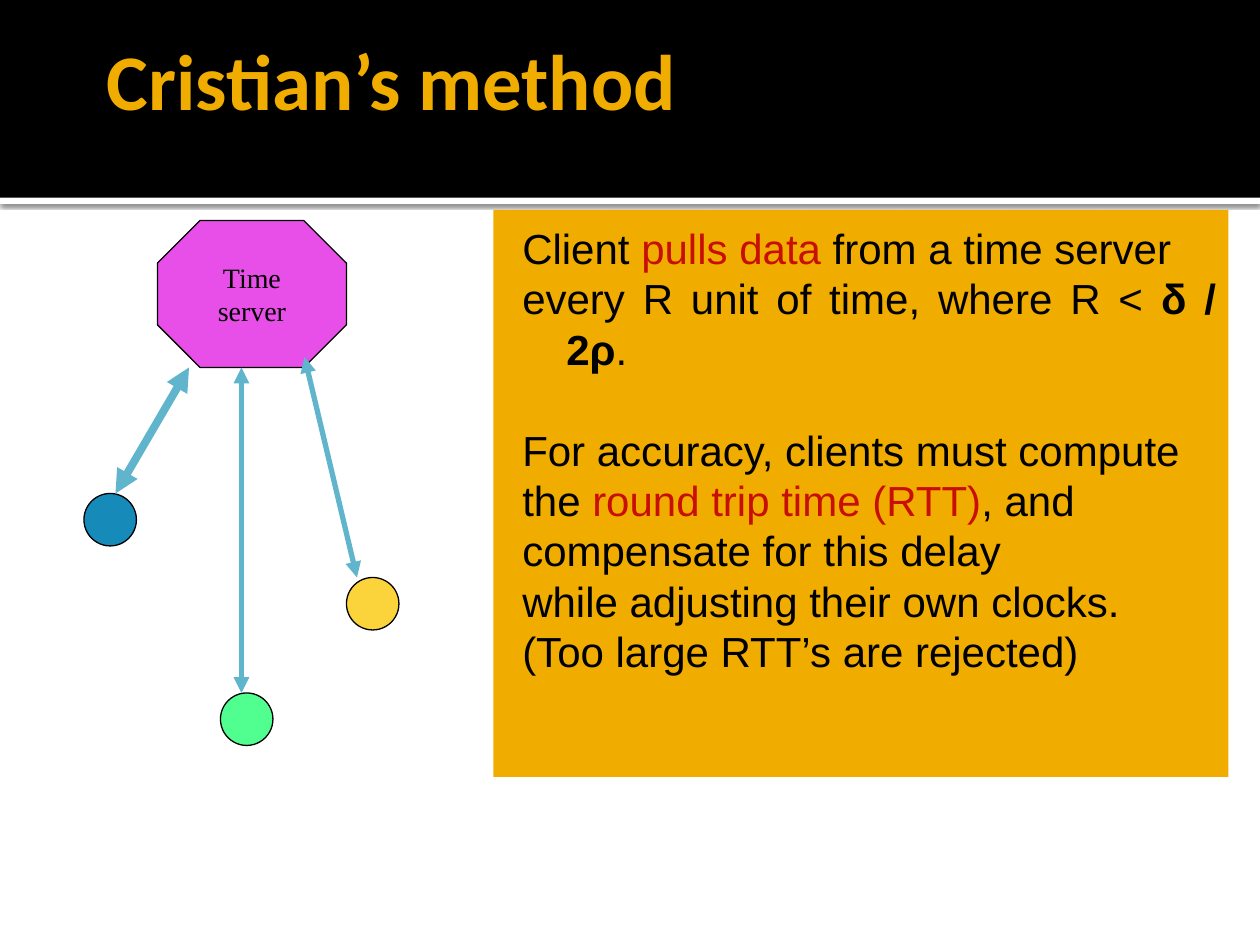
from dataclasses import dataclass

from lxml.etree import SubElement
from pptx import Presentation
from pptx.dml.color import RGBColor
from pptx.enum.shapes import MSO_CONNECTOR, MSO_SHAPE
from pptx.enum.text import MSO_ANCHOR, PP_ALIGN
from pptx.oxml.ns import qn
from pptx.util import Pt


@dataclass(frozen=True)
class Theme:
    black: str = "000000"
    white: str = "FFFFFF"
    gold: str = "F0AD00"
    red: str = "C70F05"
    magenta: str = "E84FE8"
    arrow: str = "60B5CC"
    title_font: str = "Calibri"
    body_font: str = "Arial"
    label_font: str = "Times New Roman"
    title_size: float = 45
    body_size: float = 24
    label_size: float = 16
    body_leading: float = 28.8
    outline: float = 0.75


@dataclass(frozen=True)
class Box:
    left: float
    top: float
    width: float
    height: float


@dataclass(frozen=True)
class Client:
    left: float
    top: float
    color: str


@dataclass(frozen=True)
class Arrow:
    x1: float
    y1: float
    x2: float
    y2: float
    width: float


@dataclass(frozen=True)
class Run:
    text: str
    color: str = "000000"
    bold: bool = False


@dataclass(frozen=True)
class Line:
    runs: tuple[Run, ...]
    gap: float = 0


THEME = Theme()
CLIENT_SIZE = 30
CLIENTS = (
    Client(48, 282, "168BBA"),
    Client(126, 396, "51FF91"),
    Client(198, 330, "FAD43A"),
)
ARROWS = (
    Arrow(66, 282, 108, 210, 4.5),
    Arrow(174, 204, 204, 330, 3),
    Arrow(138, 210, 138, 396, 3),
)
BODY = (
    Line((Run("Client "), Run("pulls data", THEME.red), Run(" from a time server"))),
    Line((Run("every R unit of time, where R < "), Run("δ / 2ρ", bold=True), Run("."))),
    Line((Run("For accuracy, clients must compute"),), THEME.body_leading),
    Line((Run("the "), Run("round trip time (RTT)", THEME.red), Run(", and"))),
    Line((Run("compensate for this delay"),)),
    Line((Run("while adjusting their own clocks."),)),
    Line((Run("(Too large RTT’s are rejected)"),)),
)


def rgb(value: str) -> RGBColor:
    return RGBColor.from_string(value)


def add_block(s, kind, box: Box, fill: str, line: str | None = None):
    sp = s.shapes.add_shape(
        kind, Pt(box.left), Pt(box.top), Pt(box.width), Pt(box.height)
    )
    sp.shadow.inherit = False
    sp.fill.solid()
    sp.fill.fore_color.rgb = rgb(fill)
    if line:
        sp.line.color.rgb = rgb(line)
        sp.line.width = Pt(THEME.outline)
    else:
        sp.line.fill.background()
    return sp


def set_insets(tf, left: float, top: float, right: float, bottom: float) -> None:
    tf.margin_left, tf.margin_top = Pt(left), Pt(top)
    tf.margin_right, tf.margin_bottom = Pt(right), Pt(bottom)


def set_font(font, name: str, size: float, color: str, bold: bool = False) -> None:
    font.name, font.size, font.bold = name, Pt(size), bold
    font.color.rgb = rgb(color)


def add_header(s) -> None:
    rule = add_block(s, MSO_SHAPE.RECTANGLE, Box(0, 113, 720, 3.6), THEME.white)
    effects = rule._element.spPr.find(qn("a:effectLst"))
    shadow = SubElement(
        effects, qn("a:outerShdw"), blurRad=str(Pt(2.5)), dist=str(Pt(0.8)),
        dir="5400000", algn="tl", rotWithShape="0",
    )
    color = SubElement(shadow, qn("a:srgbClr"), val=THEME.black)
    SubElement(color, qn("a:alpha"), val="60000")
    add_block(s, MSO_SHAPE.RECTANGLE, Box(0, 0, 720, 113), THEME.black)

    tf = s.shapes.add_textbox(Pt(54), Pt(0), Pt(612), Pt(90)).text_frame
    tf.word_wrap = True
    tf.vertical_anchor = MSO_ANCHOR.MIDDLE
    set_insets(tf, 7.2, 3.6, 3.6, 3.6)
    p = tf.paragraphs[0]
    p.text = "Cristian’s method"
    set_font(p.font, THEME.title_font, THEME.title_size, THEME.gold, True)


def add_body(s, lines: tuple[Line, ...]) -> None:
    sp = add_block(s, MSO_SHAPE.RECTANGLE, Box(282, 120, 420, 324), THEME.gold)
    tf = sp.text_frame
    tf.word_wrap = True
    tf.vertical_anchor = MSO_ANCHOR.TOP
    set_insets(tf, 7.2, 7.2, 7.2, 3.6)
    for i, line in enumerate(lines):
        p = tf.add_paragraph() if i else tf.paragraphs[0]
        p.alignment = PP_ALIGN.JUSTIFY
        p.line_spacing = Pt(THEME.body_leading)
        p.space_before = Pt(line.gap)
        pPr = p._p.get_or_add_pPr()
        pPr.set("marL", str(Pt(34.56)))
        pPr.set("indent", str(Pt(-25.2)))
        p.font.name, p.font.size = THEME.body_font, Pt(THEME.body_size)
        for run in line.runs:
            r = p.add_run()
            r.text = run.text
            r.font.bold = run.bold
            r.font.color.rgb = rgb(run.color)


def add_server(s) -> None:
    sp = add_block(
        s, MSO_SHAPE.OCTAGON, Box(90, 126, 108, 84), THEME.magenta, THEME.black
    )
    sp.adjustments[0] = 0.29
    tf = sp.text_frame
    tf.word_wrap = False
    tf.vertical_anchor = MSO_ANCHOR.MIDDLE
    tf.text = "Time\nserver"
    for p in tf.paragraphs:
        p.alignment = PP_ALIGN.CENTER
        set_font(p.font, THEME.label_font, THEME.label_size, THEME.black)


def add_arrow(s, arrow: Arrow) -> None:
    cxn = s.shapes.add_connector(
        MSO_CONNECTOR.STRAIGHT,
        Pt(arrow.x1), Pt(arrow.y1), Pt(arrow.x2), Pt(arrow.y2),
    )
    cxn.line.color.rgb = rgb(THEME.arrow)
    cxn.line.width = Pt(arrow.width)
    for end in ("a:headEnd", "a:tailEnd"):
        SubElement(cxn.line._get_or_add_ln(), qn(end), type="triangle")
    SubElement(cxn._element.spPr, qn("a:effectLst"))


def main() -> None:
    prs = Presentation()
    prs.slide_width, prs.slide_height = Pt(720), Pt(540)
    s = prs.slides.add_slide(prs.slide_layouts[6])
    add_header(s)
    add_body(s, BODY)
    add_server(s)
    for client in CLIENTS:
        box = Box(client.left, client.top, CLIENT_SIZE, CLIENT_SIZE)
        add_block(s, MSO_SHAPE.OVAL, box, client.color, THEME.black)
    for arrow in ARROWS:
        add_arrow(s, arrow)
    prs.save("out.pptx")


if __name__ == "__main__":
    main()
